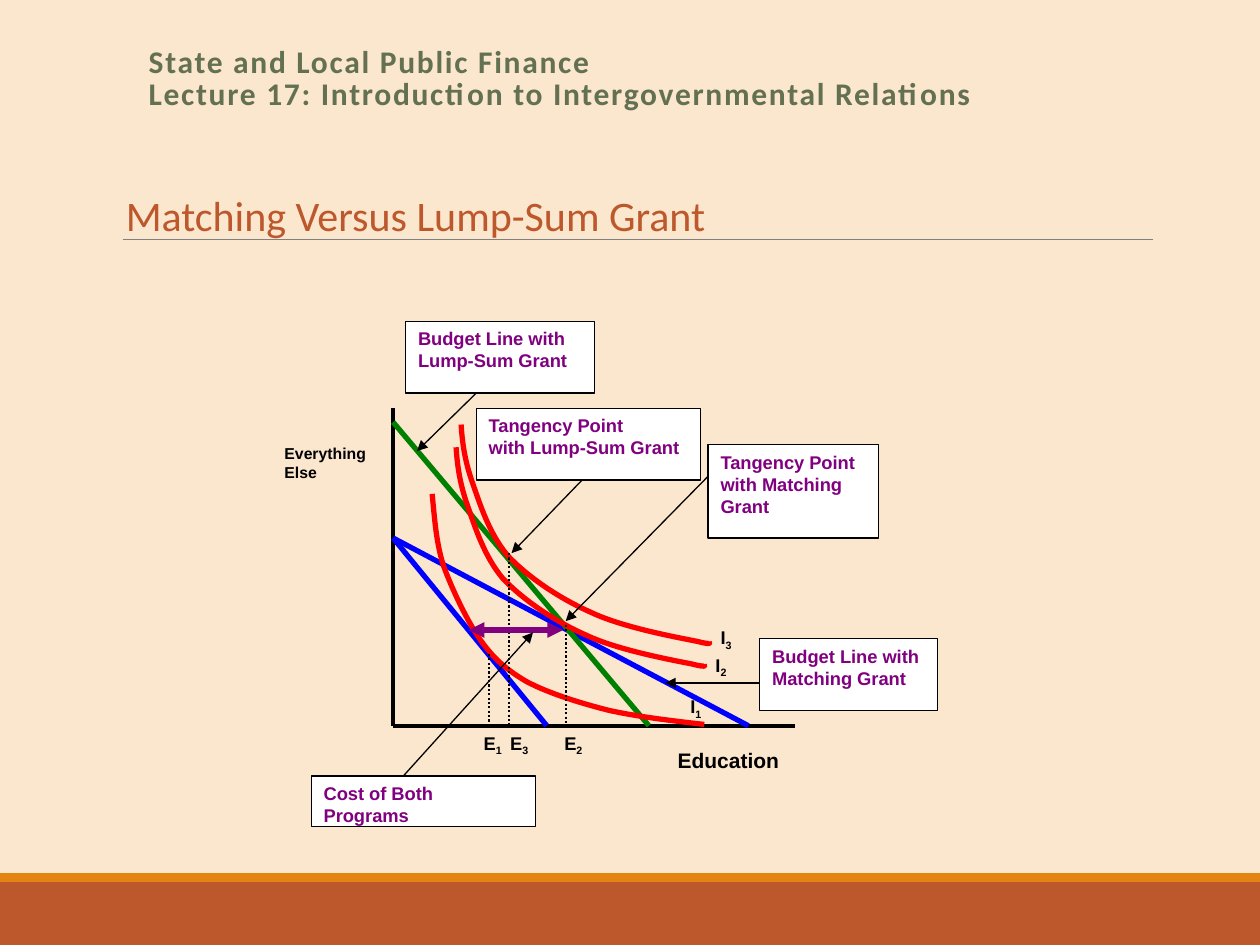
from lxml import etree
from pptx import Presentation
from pptx.dml.color import RGBColor
from pptx.enum import dml, shapes, text
from pptx.oxml import ns
from pptx.util import Inches, Pt

CREAM = RGBColor(0xFB, 0xE6, 0xCE)
RUST = RGBColor(0xBD, 0x58, 0x2C)
ORANGE = RGBColor(0xE4, 0x83, 0x12)
OLIVE = RGBColor(0x63, 0x70, 0x52)
GRAY = RGBColor(0x80, 0x80, 0x80)
BLACK = RGBColor(0, 0, 0)
WHITE = RGBColor(0xFF, 0xFF, 0xFF)
BLUE = RGBColor(0, 0, 0xFF)
GREEN = RGBColor(0, 0x80, 0)
RED = RGBColor(0xFF, 0, 0)
PURPLE = RGBColor(0x80, 0, 0x80)

prs = Presentation()
prs.slide_width, prs.slide_height = Inches(10), Inches(7.5)
slide = prs.slides.add_slide(prs.slide_layouts[5])
slide.background.fill.solid()
slide.background.fill.fore_color.rgb = CREAM


def add_line(start, end, color, width, arrows=(), dash=None):
    line = slide.shapes.add_connector(
        shapes.MSO_CONNECTOR.STRAIGHT, *map(Inches, start + end))
    line.line.color.rgb = color
    line.line.width = Pt(width)
    if dash:
        line.line.dash_style = dash
    for arrow in arrows:
        etree.SubElement(line.line._get_or_add_ln(), ns.qn(f"a:{arrow}"), type="triangle")
    etree.SubElement(line._element.spPr, ns.qn("a:effectLst"))


def write(shape, lines, size, color, font="Arial", bold=True):
    """Fill a shape with paragraphs; an underscore starts a subscript."""
    frame = shape.text_frame
    frame.word_wrap = True
    frame.vertical_anchor = text.MSO_ANCHOR.TOP
    for i, words in enumerate(lines):
        paragraph = frame.add_paragraph() if i else frame.paragraphs[0]
        paragraph.alignment = text.PP_ALIGN.LEFT
        paragraph.text = words.split("_")[0]
        for subscript in words.split("_")[1:]:
            run = paragraph.add_run()
            run.text = subscript
            run._r.get_or_add_rPr().set("baseline", "-25000")
        for run in paragraph.runs:
            for key, value in {"name": font, "size": Pt(size), "bold": bold}.items():
                setattr(run.font, key, value)
            run.font.color.rgb = color


# Footer bands and rule under the heading
for top, height, color in [(7, 0.5, RUST), (6.93, 0.07, ORANGE)]:
    band = slide.shapes.add_shape(
        shapes.MSO_SHAPE.RECTANGLE, 0, Inches(top), prs.slide_width, Inches(height))
    band.shadow.inherit = False
    band.fill.solid()
    band.fill.fore_color.rgb = color
    band.line.fill.background()
add_line((0.98, 1.9), (9.15, 1.9), GRAY, 0.5)

# Lecture title and heading
title = slide.shapes.title
title.left, title.top, title.width, title.height = map(Inches, (1.08, 0.33, 8.25, 0.65))
write(title, ["State and Local Public Finance\n"
              "Lecture 17: Introduction to Intergovernmental Relations"], 18, OLIVE, "Calibri")
title.text_frame.auto_size = text.MSO_AUTO_SIZE.NONE
title.text_frame.paragraphs[0].line_spacing = 0.85
for run in title.text_frame.paragraphs[0].runs:
    run._r.get_or_add_rPr().set("spc", "100")

heading = slide.shapes.add_textbox(*map(Inches, (0.9, 1.14, 4.82, 0.81)))
write(heading, ["Matching Versus Lump-Sum Grant"], 24, RUST, "Calibri", False)
heading.text_frame.word_wrap = False
heading.text_frame.vertical_anchor = text.MSO_ANCHOR.BOTTOM

# Axes and budget lines
axis_x, axis_y = 3.12, 5.76
origin = (axis_x, axis_y)
add_line((axis_x, 3.24), origin, BLACK, 2)
add_line(origin, (6.31, axis_y), BLACK, 2)
for intercept, reach, color in [(4.27, 4.34, BLUE), (4.27, 5.94, BLUE), (3.35, 5.15, GREEN)]:
    add_line((axis_x, intercept), (reach, axis_y), color, 3)

# Indifference curves: a start point, then two controls and a knot per segment
curve_1 = [(3.43, 3.92), (3.45, 4.11), (3.46, 4.3), (3.52, 4.49),
           (3.59, 4.68), (3.7, 4.91), (3.8, 5.06),
           (3.91, 5.22), (4.01, 5.31), (4.18, 5.41),
           (4.35, 5.5), (4.6, 5.58), (4.84, 5.64),
           (5.07, 5.69), (5.33, 5.72), (5.59, 5.75)]
curve_2 = [(3.62, 3.55), (3.63, 3.7), (3.65, 3.84), (3.71, 4.01),
           (3.77, 4.18), (3.84, 4.41), (3.99, 4.59),
           (4.15, 4.76), (4.4, 4.93), (4.65, 5.04),
           (4.9, 5.16), (5.34, 5.24), (5.49, 5.27),
           (5.65, 5.31), (5.57, 5.27), (5.59, 5.27)]
curve_3 = [(x + 0.04, y - 0.18) for x, y in curve_2]
for curve in (curve_1, curve_2, curve_3):
    start, *points = [tuple(map(Inches, point)) for point in curve]
    builder = slide.shapes.build_freeform(*start)
    builder.add_line_segments(points, close=False)
    indifference = builder.convert_to_shape()
    # Join each three straight segments into one cubic Bezier
    segments = list(indifference._element.iter(ns.qn("a:lnTo")))
    outline = segments[0].getparent()
    for k in range(0, len(segments), 3):
        bezier = etree.SubElement(outline, ns.qn("a:cubicBezTo"))
        for segment in segments[k:k + 3]:
            bezier.append(segment[0])
            outline.remove(segment)
    indifference.shadow.inherit = False
    indifference.fill.background()
    indifference.line.color.rgb = RED
    indifference.line.width = Pt(3)

# Drop lines to the education axis
for x, top in [(3.88, 5.19), (4.49, 4.96), (4.04, 4.39)]:
    add_line((x, top), (x, axis_y), BLACK, 1.25, dash=dml.MSO_LINE.ROUND_DOT)

# Axis, quantity and curve labels
labels = [
    (5.28, 5.88, 1.03, 0.34, 12, ["Education"]),
    (2.16, 3.47, 0.97, 0.46, 9, ["Everything", "Else"]),
]
for name, left, top in [("E_1", 3.74, 5.76), ("E_3", 3.95, 5.76), ("E_2", 4.38, 5.76),
                        ("I_3", 5.62, 4.92), ("I_2", 5.58, 5.14), ("I_1", 5.38, 5.47)]:
    labels.append((left, top, 0.38, 0.34, 10.5, [name]))
for *place, size, lines in labels:
    write(slide.shapes.add_textbox(*map(Inches, place)), lines, size, BLACK)

add_line((3.72, 5), (4.47, 5), PURPLE, 3, ("headEnd", "tailEnd"))

# Callouts, each with its pointer
callouts = [
    ((3.22, 2.55, 1.5, 0.57), ["Budget Line with", "Lump-Sum Grant"], (3.78, 3.12), (3.31, 3.58)),
    ((2.47, 6.16, 1.78, 0.4), ["Cost of Both Programs"], (3.2, 6.16), (4.23, 5.02)),
    ((5.62, 3.53, 1.35, 0.74), ["Tangency Point", "with Matching Grant"],
     (5.62, 3.78), (4.49, 4.93)),
    ((6.03, 5.07, 1.41, 0.57), ["Budget Line with Matching Grant"], (6.03, 5.42), (5.28, 5.42)),
    ((3.78, 3.24, 1.78, 0.57), ["Tangency Point", "with Lump-Sum Grant"],
     (4.62, 3.81), (4.06, 4.39)),
]
for place, lines, start, tip in callouts:
    callout = slide.shapes.add_shape(shapes.MSO_SHAPE.RECTANGLE, *map(Inches, place))
    callout.shadow.inherit = False
    callout.fill.solid()
    callout.fill.fore_color.rgb = WHITE
    callout.line.color.rgb = BLACK
    callout.line.width = Pt(0.75)
    write(callout, lines, 10.5, PURPLE)
    add_line(start, tip, BLACK, 0.75, ("tailEnd",))

prs.save("out.pptx")
